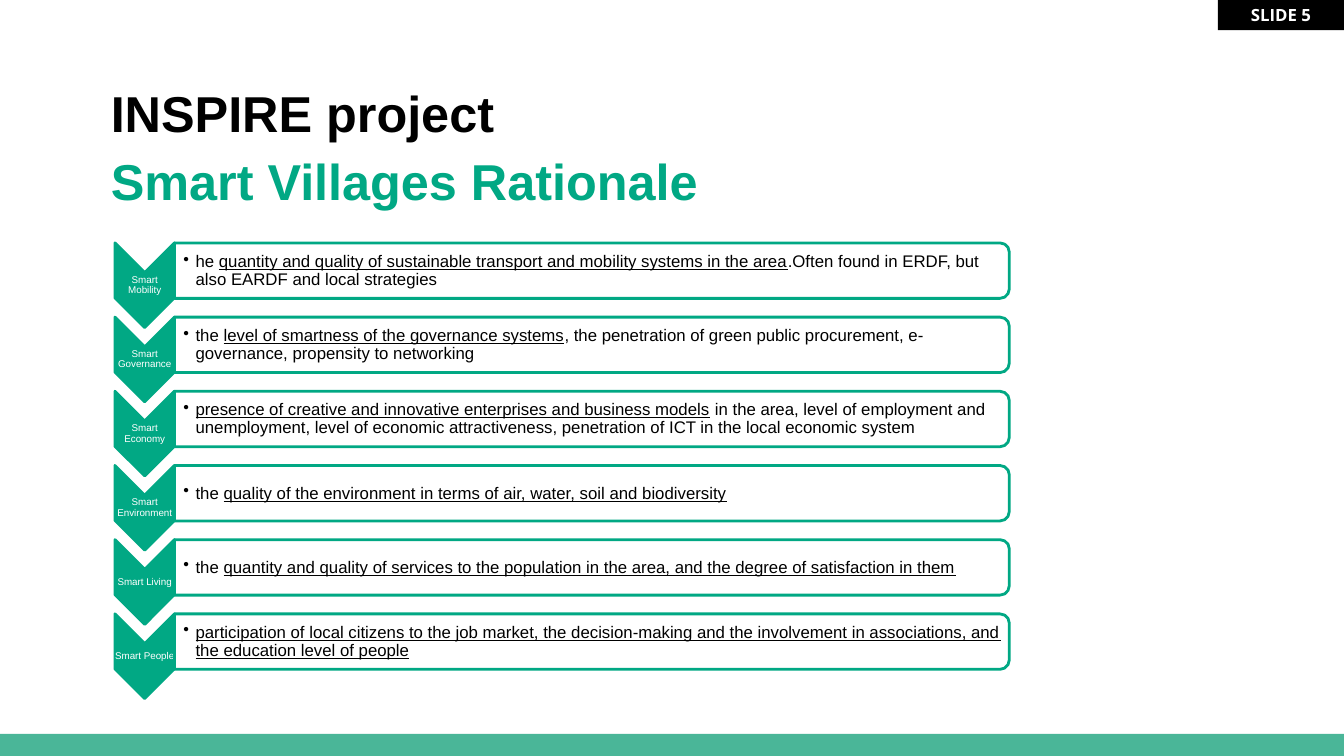
"""Build the Smart Villages Rationale slide."""
import pptx
import pptx.dml.color
import pptx.enum.shapes
import pptx.enum.text
import pptx.util
from lxml import etree
from pptx.oxml.ns import qn

SLIDE_W, SLIDE_H = 13.33, 7.5
GREEN, BAR_GREEN, BLACK, WHITE = "01A884", "4AB698", "000000", "FFFFFF"
ROW_TOP, ROW_PITCH = 2.41, 3.68 / 5
ARROW_LEFT, ARROW_W, ARROW_H = 1.14, 0.59, 0.84
CARD_LEFT, CARD_W, CARD_H = 1.73, 8.28, 0.55
SHAPES = pptx.enum.shapes.MSO_SHAPE
CENTER = pptx.enum.text.PP_ALIGN.CENTER
LEFT = pptx.enum.text.PP_ALIGN.LEFT
MIDDLE = pptx.enum.text.MSO_ANCHOR.MIDDLE
TOP = pptx.enum.text.MSO_ANCHOR.TOP

ASPECTS = [
    ("Smart Mobility", [
        ("he ", False),
        ("quantity and quality of sustainable transport and mobility systems in the area", True),
        (".Often found in ERDF, but also EARDF and local strategies", False)]),
    ("Smart Governance", [
        ("the ", False),
        ("level of smartness of the governance systems", True),
        (", the penetration of green public procurement, e-governance, "
         "propensity to networking", False)]),
    ("Smart Economy", [
        ("presence of creative and innovative enterprises and business models", True),
        (" in the area, level of employment and unemployment, level of economic "
         "attractiveness, penetration of ICT in the local economic system", False)]),
    ("Smart Environment", [
        ("the ", False),
        ("quality of the environment in terms of air, water, soil and biodiversity", True)]),
    ("Smart Living", [
        ("the ", False),
        ("quantity and quality of services to the population in the area, "
         "and the degree of satisfaction in them", True)]),
    ("Smart People", [
        ("participation of local citizens to the job market, the decision-making and the "
         "involvement in associations, and the education level of people", True)]),
]


def rgb(value):
    """Turn a hex string into a colour."""
    return pptx.dml.color.RGBColor.from_string(value)


def inches(*lengths):
    """Turn numbers into lengths in inches."""
    return [pptx.util.Inches(length) for length in lengths]


def add_block(slide, kind, area, fill, outline=None):
    """Add a filled preset shape without a shadow."""
    block = slide.shapes.add_shape(kind, *inches(*area))
    block.shadow.inherit = False
    block.fill.solid()
    block.fill.fore_color.rgb = rgb(fill)
    if outline:
        block.line.color.rgb = rgb(outline)
        block.line.width = pptx.util.Pt(2)
    else:
        block.line.fill.background()
    return block


def add_turned_block(slide, kind, area, fill):
    """Add an outlined shape turned a quarter so that it covers the given area."""
    left, top, width, height = area
    shift = (width - height) / 2
    block = add_block(slide, kind, (left + shift, top - shift, height, width), fill, GREEN)
    block.rotation = 90
    return block


def set_frame(frame, insets, anchor):
    """Set wrapping, insets and vertical anchor of a text frame."""
    frame.word_wrap = True
    frame.vertical_anchor = anchor
    (frame.margin_left, frame.margin_top,
     frame.margin_right, frame.margin_bottom) = inches(*insets)


def add_text_area(slide, area, insets, anchor):
    """Add a text box and return its frame."""
    frame = slide.shapes.add_textbox(*inches(*area)).text_frame
    set_frame(frame, insets, anchor)
    return frame


def add_run(paragraph, text, size, color, bold=False, underline=False, font="Arial"):
    """Append one formatted run."""
    run = paragraph.add_run()
    run.text = text
    run.font.name = font
    run.font.size = pptx.util.Pt(size)
    run.font.color.rgb = rgb(color)
    run.font.bold = bold
    run.font.underline = underline


def set_indent(paragraph, margin, first_line):
    """Set the left margin and first-line indent."""
    properties = paragraph._p.get_or_add_pPr()
    properties.set("marL", str(pptx.util.Inches(margin)))
    properties.set("indent", str(pptx.util.Inches(first_line)))
    return properties


def add_bullet(paragraph):
    """Give a paragraph a black hanging bullet."""
    properties = set_indent(paragraph, 0.12, -0.12)
    color = etree.SubElement(properties, qn("a:buClr"))
    etree.SubElement(color, qn("a:srgbClr"), val=BLACK)
    etree.SubElement(properties, qn("a:buChar"), char="•")


def add_page_frame(slide):
    """Add the bottom bar and the slide-number badge."""
    bar_h, badge_w = 0.22, 1.25
    add_block(slide, SHAPES.RECTANGLE, (0, SLIDE_H - bar_h, SLIDE_W, bar_h), BAR_GREEN)
    badge = add_block(slide, SHAPES.RECTANGLE, (SLIDE_W - badge_w, 0, badge_w, 0.3), BLACK)
    set_frame(badge.text_frame, (0.1, 0.05, 0.1, 0.05), MIDDLE)
    number = badge.text_frame.paragraphs[0]
    number.alignment = CENTER
    add_run(number, "SLIDE 5", 12, WHITE, bold=True, font="Open Sans")


def add_title(slide):
    """Add the two-line heading."""
    frame = add_text_area(slide, (0.94, 0.83, 8.91, 0.92), (0.1, 0.05, 0.1, 0.05), TOP)
    project, topic = frame.paragraphs[0], frame.add_paragraph()
    topic.space_before = pptx.util.Pt(10)
    for line, text, color in ((project, "INSPIRE project", BLACK),
                              (topic, "Smart Villages Rationale", GREEN)):
        set_indent(line, 0.5, -0.44)
        line.line_spacing = 0.9
        add_run(line, text, 36, color, bold=True)


def add_aspect(slide, top, name, description):
    """Add one arrow with its name and the card that describes it."""
    add_turned_block(slide, SHAPES.CHEVRON, (ARROW_LEFT, top, ARROW_W, ARROW_H), GREEN)
    label_area = (ARROW_LEFT, top + ARROW_W / 2, ARROW_W, ARROW_H - ARROW_W)
    label = add_text_area(slide, label_area, (0, 0, 0, 0), MIDDLE).paragraphs[0]
    label.alignment = CENTER
    label.line_spacing = 0.9
    add_run(label, name, 7, WHITE)

    card = add_turned_block(slide, SHAPES.ROUND_2_SAME_RECTANGLE,
                            (CARD_LEFT, top, CARD_W, CARD_H), WHITE)
    fill_color = card.fill._xPr.find(qn("a:solidFill"))[0]
    etree.SubElement(fill_color, qn("a:alpha"), val="90000")
    detail_area = (CARD_LEFT, top + 0.03, CARD_W - 0.02, CARD_H - 0.05)
    detail = add_text_area(slide, detail_area, (0.09, 0.01, 0.01, 0.01), MIDDLE).paragraphs[0]
    add_bullet(detail)
    detail.alignment = LEFT
    detail.line_spacing = 0.9
    for text, underline in description:
        add_run(detail, text, 12, BLACK, underline=underline)


def main():
    """Build and save the presentation."""
    deck = pptx.Presentation()
    deck.slide_width, deck.slide_height = inches(SLIDE_W, SLIDE_H)
    slide = deck.slides.add_slide(deck.slide_layouts[6])
    add_page_frame(slide)
    add_title(slide)
    for row, (name, description) in enumerate(ASPECTS):
        add_aspect(slide, ROW_TOP + row * ROW_PITCH, name, description)
    deck.save("out.pptx")


if __name__ == "__main__":
    main()
